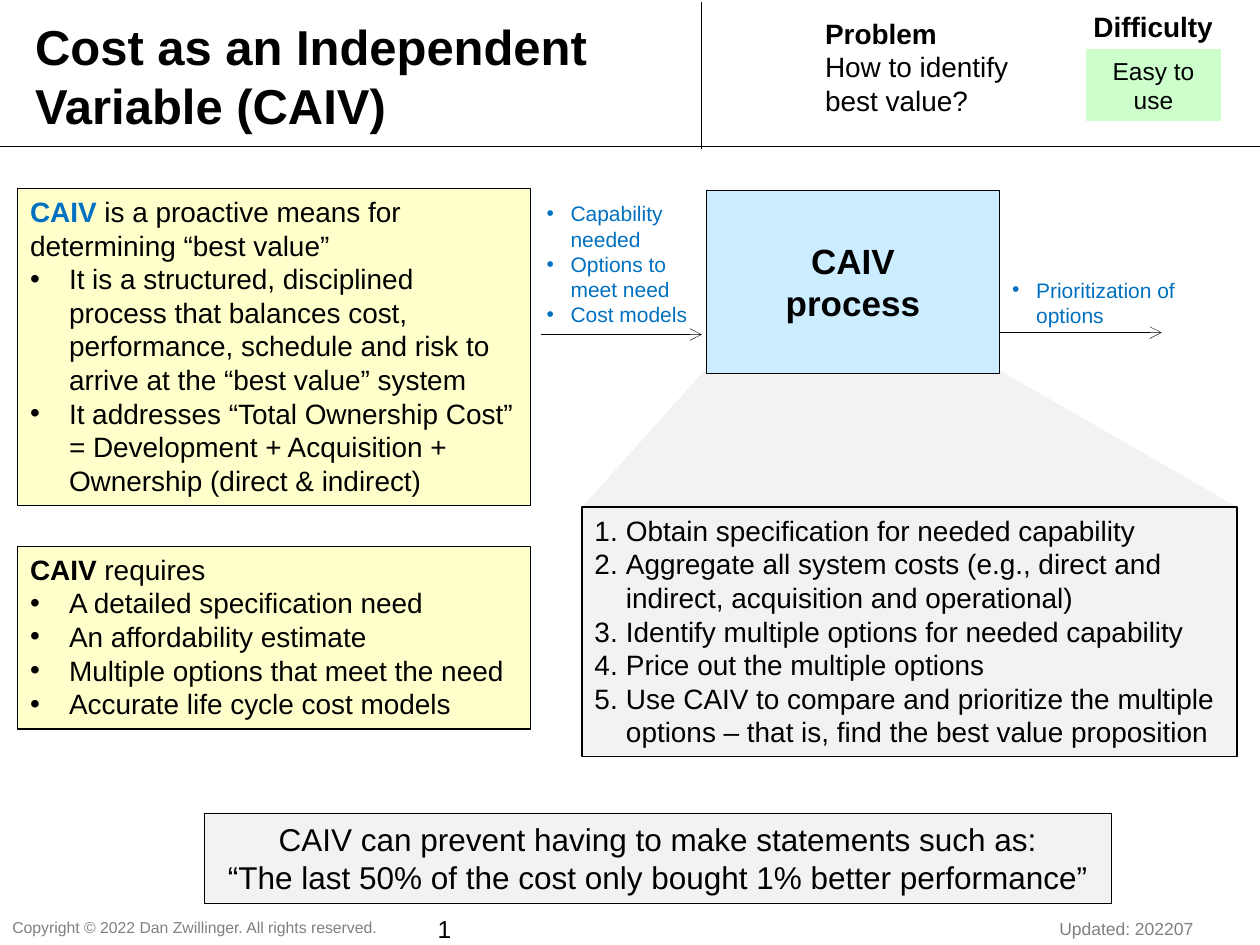
"""Build the one-page summary slide on cost as an independent variable."""
from lxml import etree
from pptx import Presentation
from pptx.dml.color import RGBColor
from pptx.enum.shapes import MSO_CONNECTOR, MSO_SHAPE
from pptx.enum.text import MSO_ANCHOR, PP_ALIGN
from pptx.oxml.ns import qn
from pptx.util import Inches, Pt

RECT, FAN = MSO_SHAPE.RECTANGLE, MSO_SHAPE.ISOSCELES_TRIANGLE
LINE = MSO_CONNECTOR.STRAIGHT
LEFT, MID, RIGHT = PP_ALIGN.LEFT, PP_ALIGN.CENTER, PP_ALIGN.RIGHT
TOP, HALF = MSO_ANCHOR.TOP, MSO_ANCHOR.MIDDLE

THEME = {
    "font": "Arial",
    "ink": "000000", "blue": "0070C0", "gray": "808080",
    "cream": "FFFFCC", "sky": "CCECFF", "mint": "CCFFCC", "pale": "F2F2F2",
    "title": 28, "head": 20, "quote": 18, "body": 16,
    "badge": 14, "label": 12, "date": 10, "legal": 9,
    "hair": 0.25, "thin": 0.75, "bold": 1,
}

COLS, ROWS = 100, 75
CARD_X, CARD_W = 1.4, 40.7
STEP_X, STEP_W = 46.2, 52
STEP_Y, FAN_Y = 40.25, 20.5
BOX_X, BOX_Y, BOX_W, BOX_H = 56.05, 15.1, 23.3, 14.5
RULE_X, RULE_Y = 55.7, 11.65
FLOW = 12.8

TITLE = ["Cost as an Independent Variable (CAIV)"]
PROBLEM = [[("Problem", {"bold": True})], "How to identify best value?"]
CARDS = [
    (14.95, 25.2,
     [("CAIV", {"bold": True, "color": "blue"}),
      (" is a proactive means for determining “best value”", {})],
     ["It is a structured, disciplined process that balances cost, performance, "
      "schedule and risk to arrive at the “best value” system",
      "It addresses “Total Ownership Cost” = Development + Acquisition + "
      "Ownership (direct & indirect)"]),
    (43.35, 14.5,
     [("CAIV", {"bold": True}), (" requires", {})],
     ["A detailed specification need",
      "An affordability estimate",
      "Multiple options that meet the need",
      "Accurate life cycle cost models"]),
]
STEPS = [
    "Obtain specification for needed capability",
    "Aggregate all system costs (e.g., direct and indirect, acquisition and operational)",
    "Identify multiple options for needed capability",
    "Price out the multiple options",
    "Use CAIV to compare and prioritize the multiple options – that is, "
    "find the best value proposition",
]
FLOWS = [
    (42.4, 15.45, 14.3, 11.1, ["Capability needed", "Options to meet need", "Cost models"]),
    (79.35, 21.5, 16, 5.1, ["Prioritization of options"]),
]
ARROWS = [(42.9, 26.55), (79.4, 26.4)]
QUOTE = ["CAIV can prevent having to make statements such as:",
         "“The last 50% of the cost only bought 1% better performance”"]
NOTES = [
    (0, 72.35, 31.4, 2.5, "Copyright © 2022 Dan Zwillinger. All rights reserved.", "legal"),
    (83.1, 72.4, 12.7, 2.7, "Updated: 202207", "date"),
]

deck = Presentation()
deck.slide_width, deck.slide_height = Inches(10), Inches(7.5)
page = deck.slides.add_slide(deck.slide_layouts[6])


def cell(x, y, w, h):
    across, down = deck.slide_width / COLS, deck.slide_height / ROWS
    return [round(n * unit) for n, unit in zip((x, y, w, h), (across, down) * 2)]


def tint(name):
    return RGBColor.from_string(THEME[name])


def bullet(para, mark, inset):
    props = para._p.get_or_add_pPr()
    props.set("marL", str(Inches(inset)))
    props.set("indent", str(-Inches(inset)))
    etree.SubElement(props, qn("a:buFont"), typeface=THEME["font"])
    if mark == "1.":
        etree.SubElement(props, qn("a:buAutoNum"), type="arabicPeriod")
    else:
        etree.SubElement(props, qn("a:buChar"), char=mark)


def write(shape, paras, size="body", color="ink", bold=False, align=LEFT,
          anchor=TOP, wrap=True, mark=None, inset=0.31, lead=0):
    frame = shape.text_frame
    frame.word_wrap, frame.vertical_anchor = wrap, anchor
    for i, runs in enumerate(paras):
        para = frame.paragraphs[0] if i == 0 else frame.add_paragraph()
        para.alignment = align
        if mark and i >= lead:
            bullet(para, mark, inset)
        for text, style in [(runs, {})] if isinstance(runs, str) else runs:
            run = para.add_run()
            run.text = text
            run.font.name, run.font.size = THEME["font"], Pt(THEME[size])
            run.font.bold = style.get("bold", bold)
            run.font.color.rgb = tint(style.get("color", color))


def label(at, paras, **form):
    write(page.shapes.add_textbox(*cell(*at)), paras, **form)


def block(at, fill, edge=None, kind=RECT):
    shape = page.shapes.add_shape(kind, *cell(*at))
    shape.shadow.inherit = False
    shape.fill.solid()
    shape.fill.fore_color.rgb = tint(fill)
    if edge:
        shape.line.color.rgb = tint("ink")
        shape.line.width = Pt(THEME[edge])
    else:
        shape.line.fill.background()
    return shape


def rule(x1, y1, x2, y2, edge="thin", arrow=False):
    line = page.shapes.add_connector(LINE, *cell(x1, y1, x2, y2))
    line.line.color.rgb = tint("ink")
    line.line.width = Pt(THEME[edge])
    if arrow:
        etree.SubElement(line.line._get_or_add_ln(), qn("a:tailEnd"), type="arrow")
    etree.SubElement(line._element.spPr, qn("a:effectLst"))


def main():
    fan = block((STEP_X, FAN_Y, STEP_W, STEP_Y - FAN_Y), "pale", kind=FAN)
    fan.adjustments[0] = 0.34

    label((1.8, 0.8, 48.2, 10.4), TITLE, size="title", bold=True)
    label((64.5, 0.8, 17.2, 9.1), PROBLEM)
    rule(0, RULE_Y, COLS, RULE_Y)
    rule(RULE_X, RULE_Y + 0.2, RULE_X, 0.2)

    write(block((STEP_X, STEP_Y, STEP_W, 19.8), "pale", "bold"), STEPS,
          mark="1.", inset=0.25)
    write(block((BOX_X, BOX_Y, BOX_W, BOX_H), "sky", "hair"), ["CAIV", "process"],
          size="head", bold=True, align=MID, anchor=HALF)

    for *at, items in FLOWS:
        label(at, items, size="label", color="blue", mark="•", inset=0.19)
    for x, y in ARROWS:
        rule(x, y, x + FLOW, y, edge="hair", arrow=True)

    label((85.8, 0.3, 11.5, 3.7), ["Difficulty"], bold=True, wrap=False)
    write(block((86.2, 3.9, 10.7, 5.7), "mint"), ["Easy to use"],
          size="badge", align=MID, anchor=HALF)

    for y, h, intro, items in CARDS:
        write(block((CARD_X, y, CARD_W, h), "cream", "thin"), [intro, *items],
              mark="•", lead=1)

    write(block((16.2, 64.55, 72, 7.1), "pale", "hair"), QUOTE,
          size="quote", align=MID, anchor=HALF)

    for *at, text, size in NOTES:
        label(at, [text], size=size, color="gray", wrap=False)
    label((31.3, 72.05, 5.5, 2.7), ["1"], size="badge", align=RIGHT)
    deck.save("out.pptx")


if __name__ == "__main__":
    main()
